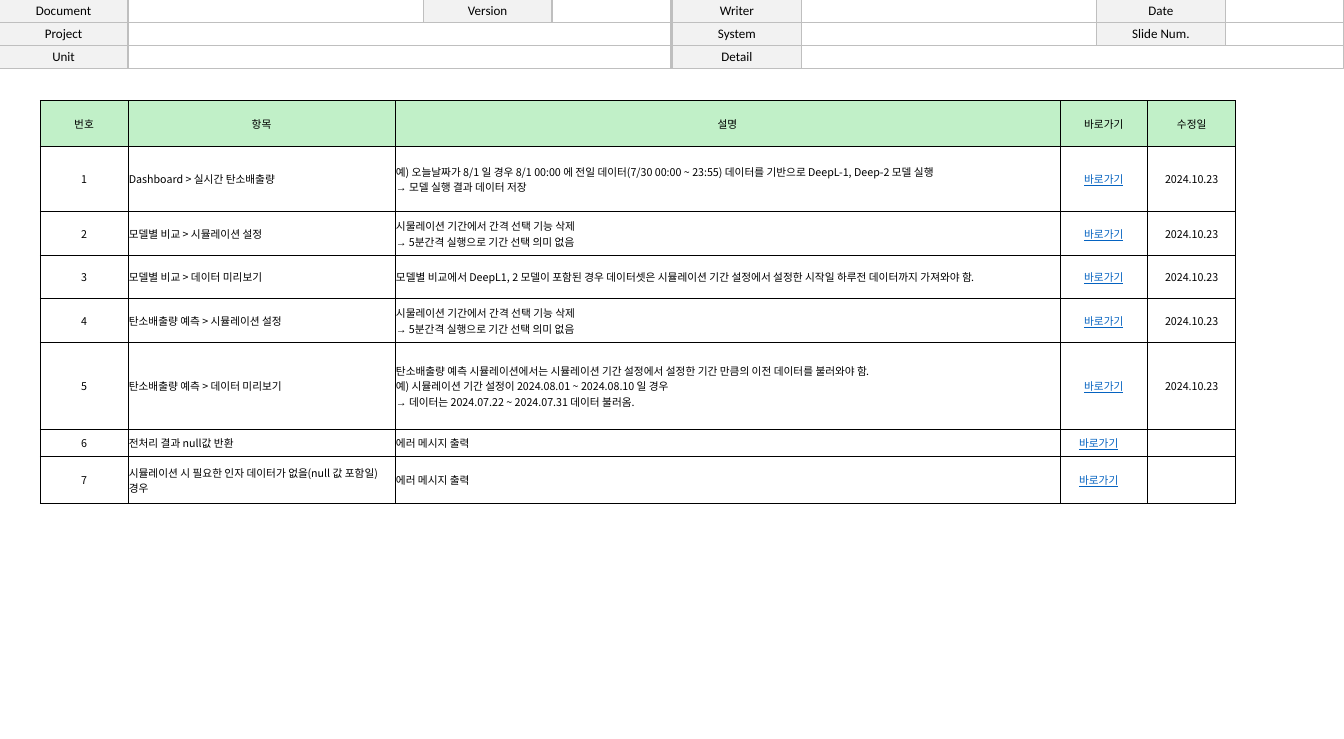
from lxml import etree
from pptx import Presentation
from pptx.dml.color import RGBColor
from pptx.enum.shapes import MSO_SHAPE
from pptx.enum.text import MSO_ANCHOR, PP_ALIGN
from pptx.oxml.ns import qn
from pptx.util import Inches, Pt

RECTANGLE = MSO_SHAPE.RECTANGLE
MIDDLE = MSO_ANCHOR.MIDDLE
LEFT, CENTER = PP_ALIGN.LEFT, PP_ALIGN.CENTER

BLACK = RGBColor(0x00, 0x00, 0x00)
LABEL_GRAY = RGBColor(0xF2, 0xF2, 0xF2)
RULE_GRAY = RGBColor(0xBF, 0xBF, 0xBF)
HEADING_GREEN = RGBColor(0xC1, 0xF0, 0xC8)
LINK_BLUE = RGBColor(0x05, 0x63, 0xC1)

LABEL_FONT, BODY_FONT, ARROW_FONT = "Calibri", "Noto Sans CJK KR", "Arial"
ARROW = "→"
BODY_SIZE = 9

BAND_EDGE, BAND_HEIGHT = -0.01, 0.27
STRIP_WIDTH, LABEL_WIDTH = 7.88, 1.51
STRIP_LEFTS = [BAND_EDGE, 7.86]
LABEL_COLUMNS = [
    (BAND_EDGE, ["Document", "Project", "Unit"]),
    (7.88, ["Writer", "System", "Detail"]),
    (4.96, ["Version"]),
    (12.85, ["Date", "Slide Num."]),
]

COLUMN_WIDTHS = [1.03, 3.13, 7.79, 1.03, 1.03]
ROW_HEIGHTS = [0.53, 0.77, 0.51, 0.51, 0.51, 1.02, 0.32, 0.55]
HEADINGS = ["번호", "항목", "설명", "바로가기", "수정일"]
LINK_TEXT = "바로가기"
LINK_COLUMN = 3
UNDATED_LINK_MARGIN = 0.13
REVISED = "2024.10.23"
NO_INTERVAL = "시물레이션 기간에서 간격 선택 기능 삭제\n→ 5분간격 실행으로 기간 선택 의미 없음"
ERROR_MESSAGE = "에러 메시지 출력"
CHANGES = [
    ("Dashboard > 실시간 탄소배출량",
     "예) 오늘날짜가 8/1 일 경우 8/1 00:00 에 전일 데이터(7/30 00:00 ~ 23:55) "
     "데이터를 기반으로 DeepL-1, Deep-2 모델 실행\n→ 모델 실행 결과 데이터 저장", REVISED),
    ("모델별 비교 > 시뮬레이션 설정", NO_INTERVAL, REVISED),
    ("모델별 비교 > 데이터 미리보기",
     "모델별 비교에서 DeepL1, 2 모델이 포함된 경우 데이터셋은 시뮬레이션 기간 설정에서 "
     "설정한 시작일 하루전 데이터까지 가져와야 함.", REVISED),
    ("탄소배출량 예측 > 시뮬레이션 설정", NO_INTERVAL, REVISED),
    ("탄소배출량 예측 > 데이터 미리보기",
     "탄소배출량 예측 시뮬레이션에서는 시뮬레이션 기간 설정에서 설정한 기간 만큼의 "
     "이전 데이터를 불러와야 함.\n예) 시뮬레이션 기간 설정이 2024.08.01 ~ 2024.08.10 일 경우\n"
     "→ 데이터는 2024.07.22 ~ 2024.07.31 데이터 불러옴.", REVISED),
    ("전처리 결과 null값 반환", ERROR_MESSAGE, ""),
    ("시뮬레이션 시 필요한 인자 데이터가 없을(null 값 포함일) 경우", ERROR_MESSAGE, ""),
]


def add_run(paragraph, text, font_name, size, color=BLACK):
    """Add one run with the same font for Latin and Korean text."""
    run = paragraph.add_run()
    run.text = text
    run.font.name = font_name
    run.font.size = Pt(size)
    run.font.color.rgb = color
    etree.SubElement(run.font._element, qn("a:ea"), typeface=font_name)
    return run


def add_break(paragraph):
    """Add a line break at the body text size."""
    line_break = etree.SubElement(paragraph._p, qn("a:br"))
    etree.SubElement(line_break, qn("a:rPr"), sz=str(BODY_SIZE * 100))


def add_box(slide, left, row, width, label=""):
    """Add one box of the document band, shaded when it has a label."""
    box = slide.shapes.add_shape(
        RECTANGLE, Inches(left), Inches(BAND_EDGE + row * BAND_HEIGHT),
        Inches(width), Inches(BAND_HEIGHT))
    box.shadow.inherit = False
    box.line.color.rgb = RULE_GRAY
    box.line.width = Pt(1)
    if not label:
        box.fill.background()
        return
    box.fill.solid()
    box.fill.fore_color.rgb = LABEL_GRAY
    frame = box.text_frame
    frame.vertical_anchor = MIDDLE
    frame.margin_top = frame.margin_bottom = 0
    frame.paragraphs[0].alignment = CENTER
    add_run(frame.paragraphs[0], label, LABEL_FONT, 11)


def add_document_band(slide):
    """Add the strips and labels along the top edge."""
    for left in STRIP_LEFTS:
        for row in range(3):
            add_box(slide, left, row, STRIP_WIDTH)
    for left, labels in LABEL_COLUMNS:
        for row, label in enumerate(labels):
            add_box(slide, left, row, LABEL_WIDTH, label)


def add_borders(cell):
    """Draw thin black borders on the four sides of a cell."""
    properties = cell._tc.get_or_add_tcPr()
    for side in ("a:lnL", "a:lnR", "a:lnT", "a:lnB"):
        border = etree.SubElement(properties, qn(side), w=str(Pt(0.5)))
        fill = etree.SubElement(border, qn("a:solidFill"))
        etree.SubElement(fill, qn("a:srgbClr"), val=str(BLACK))


def format_cell(cell, is_heading):
    """Set the margins, anchor, borders and fill of a cell."""
    cell.margin_left = cell.margin_top = cell.margin_right = Inches(0.01)
    cell.margin_bottom = 0
    cell.vertical_anchor = MIDDLE
    add_borders(cell)
    if is_heading:
        cell.fill.solid()
        cell.fill.fore_color.rgb = HEADING_GREEN
    else:
        cell.fill.background()


def write_cell(cell, text, alignment, is_link):
    """Write lines into a cell, with leading arrows in their own font."""
    paragraph = cell.text_frame.paragraphs[0]
    paragraph.alignment = alignment
    paragraph.font.size = Pt(BODY_SIZE)
    for number, line in enumerate(text.split("\n")):
        if number:
            add_break(paragraph)
        if line.startswith(ARROW):
            add_run(paragraph, ARROW, ARROW_FONT, BODY_SIZE)
            line = line.removeprefix(ARROW)
        if is_link:
            add_run(paragraph, line, BODY_FONT, BODY_SIZE, LINK_BLUE).font.underline = True
        elif line:
            add_run(paragraph, line, BODY_FONT, BODY_SIZE)


def add_change_table(slide):
    """Add the table of numbered changes."""
    rows = [HEADINGS] + [
        [str(number), item, description, LINK_TEXT, date]
        for number, (item, description, date) in enumerate(CHANGES, 1)]
    table = slide.shapes.add_table(
        len(rows), len(HEADINGS), Inches(0.47), Inches(1.18),
        Inches(sum(COLUMN_WIDTHS)), Inches(sum(ROW_HEIGHTS))).table
    table.first_row = table.horz_banding = False
    for column, width in zip(table.columns, COLUMN_WIDTHS):
        column.width = Inches(width)
    for row, height in zip(table.rows, ROW_HEIGHTS):
        row.height = Inches(height)
    for r, texts in enumerate(rows):
        for c, text in enumerate(texts):
            cell = table.cell(r, c)
            is_heading = r == 0
            is_link = c == LINK_COLUMN and not is_heading
            format_cell(cell, is_heading)
            if is_link and not texts[-1]:
                cell.margin_right = Inches(UNDATED_LINK_MARGIN)
            alignment = LEFT if c in (1, 2) and not is_heading else CENTER
            write_cell(cell, text, alignment, is_link)


def main():
    """Build and save the change list slide."""
    presentation = Presentation()
    presentation.slide_width = Inches(15.75)
    presentation.slide_height = Inches(8.66)
    slide = presentation.slides.add_slide(presentation.slide_layouts[6])
    add_document_band(slide)
    add_change_table(slide)
    presentation.save("out.pptx")


if __name__ == "__main__":
    main()
